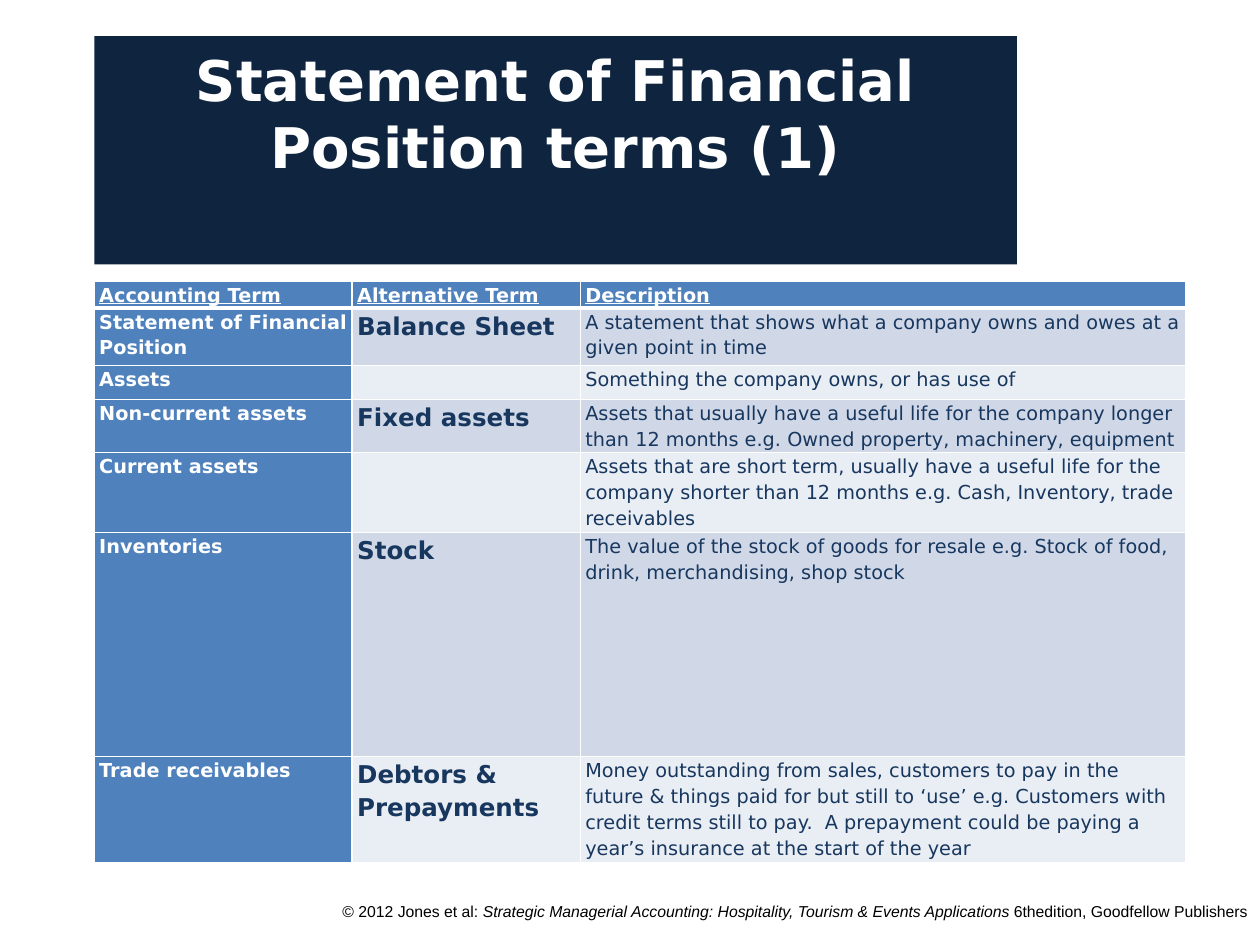
import pptx
import pptx.dml.color
import pptx.enum.text
import pptx.oxml
import pptx.oxml.ns
import pptx.util

Cm = pptx.util.Cm
Pt = pptx.util.Pt

NAVY = pptx.dml.color.RGBColor(0x0F, 0x24, 0x3E)
BLUE = pptx.dml.color.RGBColor(0x4F, 0x81, 0xBD)
INK = pptx.dml.color.RGBColor(0x17, 0x37, 0x5E)
DARK_BAND = pptx.dml.color.RGBColor(0xD0, 0xD8, 0xE8)
LIGHT_BAND = pptx.dml.color.RGBColor(0xE9, 0xED, 0xF4)
WHITE = pptx.dml.color.RGBColor(0xFF, 0xFF, 0xFF)
BLACK = pptx.dml.color.RGBColor(0, 0, 0)

HEADINGS = ["Accounting Term", "Alternative Term", "Description"]
TERMS = [
    ("Statement of Financial Position", "Balance Sheet",
     "A statement that shows what a company owns and owes at a given point in time"),
    ("Assets", "", "Something the company owns, or has use of"),
    ("Non-current assets", "Fixed assets",
     "Assets that usually have a useful life for the company longer than 12 months "
     "e.g. Owned property, machinery, equipment"),
    ("Current assets", "",
     "Assets that are short term, usually have a useful life for the company shorter "
     "than 12 months e.g. Cash, Inventory, trade receivables"),
    ("Inventories", "Stock",
     "The value of the stock of goods for resale e.g. Stock of food, drink, "
     "merchandising, shop stock"),
    ("Trade receivables", "Debtors & Prepayments",
     "Money outstanding from sales, customers to pay in the future & things paid for "
     "but still to ‘use’ e.g. Customers with credit terms still to pay.  A prepayment "
     "could be paying a year’s insurance at the start of the year"),
]
COLUMN_WIDTHS = [5.2, 4.6, 12.2]
ROW_HEIGHTS = [0.5, 1.16, 0.69, 1.03, 1.57, 4.52, 2.08]
HEADING_FORMAT = dict(size=11, color=WHITE, bold=True, underline=True)
COLUMN_FORMATS = [
    dict(size=11, color=WHITE, bold=True),
    dict(size=14, color=INK, bold=True),
    dict(size=11, color=INK),
]


def add_text(paragraph, text, size, color, font="DejaVu Sans", bold=False,
             italic=False, underline=False):
    run = paragraph.add_run()
    run.text = text
    run.font.name = font
    run.font.size = Pt(size)
    run.font.color.rgb = color
    run.font.bold = bold
    run.font.italic = italic
    run.font.underline = underline


def set_insets(target, left, top, right, bottom):
    target.margin_left, target.margin_top = Cm(left), Cm(top)
    target.margin_right, target.margin_bottom = Cm(right), Cm(bottom)


def set_borders(cell, **widths):
    """Draw white borders; widths in points are keyed L, R, T, B, in that order."""
    properties = cell._tc.get_or_add_tcPr()
    for side, width in widths.items():
        properties.append(pptx.oxml.parse_xml(
            f'<a:ln{side} {pptx.oxml.ns.nsdecls("a")} w="{int(Pt(width))}">'
            f'<a:solidFill><a:srgbClr val="{WHITE}"/></a:solidFill></a:ln{side}>'))


def fill_cell(cell, text, fill, text_format, top=1, bottom=1):
    set_borders(cell, L=1, R=1, T=top, B=bottom)
    cell.fill.solid()
    cell.fill.fore_color.rgb = fill
    set_insets(cell, 0.1, 0, 0.1, 0)
    paragraph = cell.text_frame.paragraphs[0]
    paragraph.line_spacing = 1.15
    if text:
        add_text(paragraph, text, **text_format)
    else:
        # An empty cell must not stretch its row.
        paragraph._p.get_or_add_endParaRPr().set("sz", "1100")


def add_title(slide):
    title = slide.shapes.title
    title.left, title.top, title.width, title.height = Cm(1.9), Cm(0.73), Cm(18.6), Cm(4.6)
    title.fill.solid()
    title.fill.fore_color.rgb = NAVY
    frame = title.text_frame
    frame.word_wrap = True
    frame.auto_size = pptx.enum.text.MSO_AUTO_SIZE.NONE
    frame.vertical_anchor = pptx.enum.text.MSO_ANCHOR.TOP
    set_insets(frame, 0.25, 0.19, 0.25, 0.13)
    paragraph = frame.paragraphs[0]
    paragraph.alignment = pptx.enum.text.PP_ALIGN.CENTER
    add_text(paragraph, "Statement of Financial Position terms (1)",
             size=32, color=WHITE, bold=True)


def add_terms_table(slide):
    table = slide.shapes.add_table(
        len(ROW_HEIGHTS), len(COLUMN_WIDTHS), Cm(1.9), Cm(5.67),
        Cm(sum(COLUMN_WIDTHS)), Cm(sum(ROW_HEIGHTS))).table
    for column, width in zip(table.columns, COLUMN_WIDTHS):
        column.width = Cm(width)
    for row, height in zip(table.rows, ROW_HEIGHTS):
        row.height = Cm(height)

    for column, heading in enumerate(HEADINGS):
        fill_cell(table.cell(0, column), heading, BLUE, HEADING_FORMAT, bottom=3)
    for row, terms in enumerate(TERMS, start=1):
        band = DARK_BAND if row % 2 else LIGHT_BAND
        for column, text in enumerate(terms):
            fill_cell(table.cell(row, column), text, band if column else BLUE,
                      COLUMN_FORMATS[column], top=3 if row == 1 else 1)


def add_copyright(slide):
    frame = slide.shapes.add_textbox(Cm(5.66), Cm(18.06), Cm(19.74), Cm(0.99)).text_frame
    frame.word_wrap = True
    paragraph = frame.paragraphs[0]
    paragraph.alignment = pptx.enum.text.PP_ALIGN.RIGHT
    for text, italic in [
        ("© 2012 Jones et al: ", False),
        ("Strategic Managerial Accounting: Hospitality, Tourism & Events Applications ", True),
        ("6thedition, Goodfellow Publishers", False),
    ]:
        add_text(paragraph, text, size=9, color=BLACK, font="Arial", italic=italic)


def main():
    presentation = pptx.Presentation()
    presentation.slide_width, presentation.slide_height = Cm(25.4), Cm(19.05)
    slide = presentation.slides.add_slide(presentation.slide_layouts[5])
    add_copyright(slide)
    add_title(slide)
    add_terms_table(slide)
    presentation.save("out.pptx")


if __name__ == "__main__":
    main()
